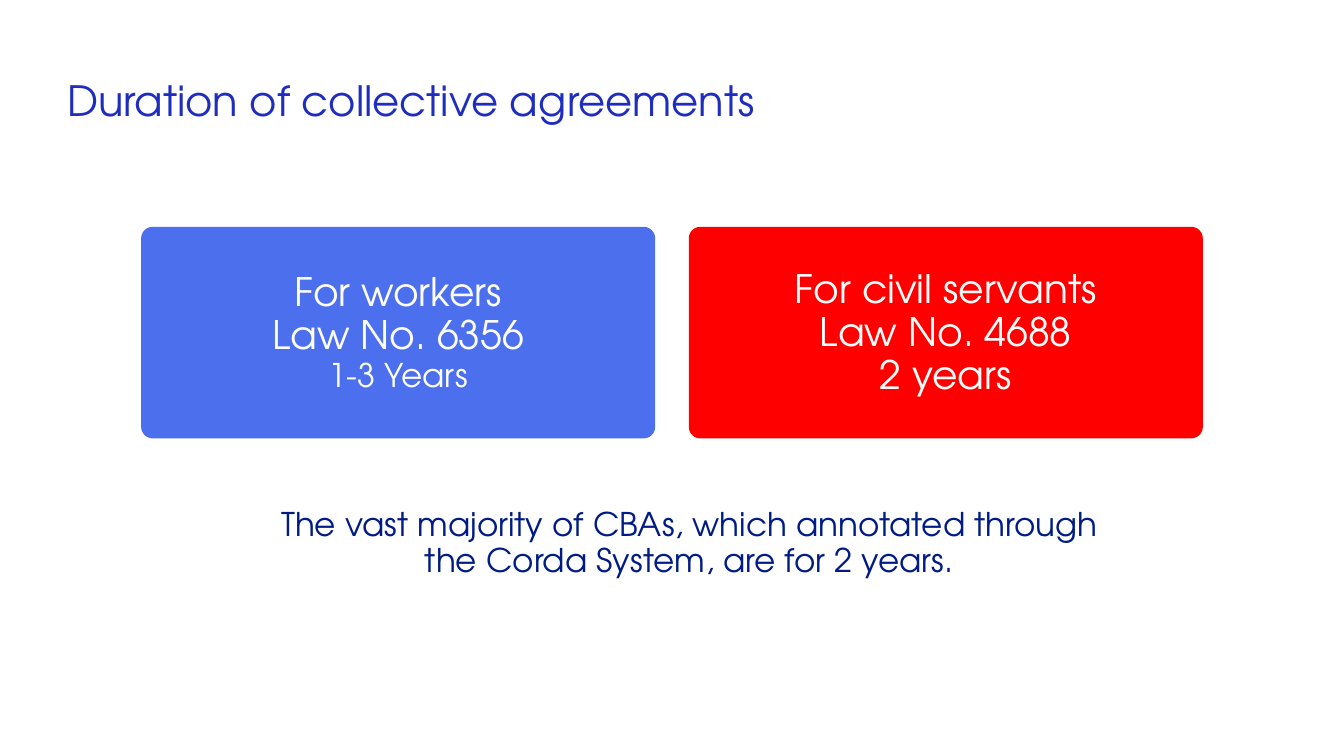
"""Build the slide on the duration of collective agreements."""
from dataclasses import dataclass

from pptx import Presentation, util as u
from pptx.dml.color import RGBColor
from pptx.enum import shapes, text
from pptx.text.text import TextFrame

WIDTH, HEIGHT = u.Inches(13.33), u.Inches(7.5)
COLUMN, ROW = WIDTH / 40, HEIGHT / 30
FONT = "TeX Gyre Adventor"
BLUE = RGBColor(0x4B, 0x6F, 0xED)
RED = RGBColor(0xFF, 0x00, 0x00)
WHITE = RGBColor(0xFD, 0xFD, 0xFC)
NAVY = RGBColor(0x00, 0x1C, 0x84)
TITLE_BLUE = RGBColor(0x1E, 0x2D, 0xBE)


@dataclass(frozen=True)
class Area:
    column: float
    row: float
    columns: float
    rows: float

    def box(self) -> tuple[int, int, int, int]:
        return (round(self.column * COLUMN), round(self.row * ROW),
                round(self.columns * COLUMN), round(self.rows * ROW))


@dataclass(frozen=True)
class Line:
    wording: str
    size: float
    spacing: float
    color: RGBColor = WHITE


@dataclass(frozen=True)
class Group:
    fill: RGBColor
    lines: tuple[Line, ...]


@dataclass(frozen=True)
class Statement:
    area: Area
    line: Line
    alignment: text.PP_ALIGN


LARGE, SMALL = (28, 30.8), (23.3, 25.7)
GROUPS = (
    Group(BLUE, (Line("For workers", *LARGE), Line("Law No. 6356", *LARGE),
                 Line("1-3 Years", *SMALL))),
    Group(RED, (Line("For civil servants", *LARGE), Line("Law No. 4688", *LARGE),
                Line("2 years", *LARGE))),
)
FIRST_COLUMN, PITCH = 4.2, 16.3
STATEMENTS = (
    Statement(Area(2, 2.96, 35.77, 1.96),
              Line("Duration of collective agreements", 29.8, 35.8, TITLE_BLUE),
              text.PP_ALIGN.LEFT),
    Statement(Area(7.8, 20.12, 25.42, 2.92),
              Line("The vast majority of CBAs, which annotated through "
                   "the Corda System, are for 2 years.", *SMALL, NAVY),
              text.PP_ALIGN.CENTER),
)


def write(frame: TextFrame, lines: tuple[Line, ...], alignment: text.PP_ALIGN) -> None:
    frame.word_wrap = True
    frame.margin_left = frame.margin_right = frame.margin_top = frame.margin_bottom = 0
    for index, line in enumerate(lines):
        paragraph = frame.add_paragraph() if index else frame.paragraphs[0]
        paragraph.text = line.wording
        paragraph.alignment = alignment
        paragraph.line_spacing = u.Pt(line.spacing)
        paragraph.font.name = FONT
        paragraph.font.size = u.Pt(line.size)
        paragraph.font.color.rgb = line.color


def draw_group(slide, group: Group, area: Area) -> None:
    card = slide.shapes.add_shape(shapes.MSO_SHAPE.ROUNDED_RECTANGLE, *area.box())
    card.adjustments[0] = 0.055
    card.shadow.inherit = False
    card.fill.solid()
    card.fill.fore_color.rgb = group.fill
    card.line.fill.background()
    card.text_frame.vertical_anchor = text.MSO_ANCHOR.MIDDLE
    write(card.text_frame, group.lines, text.PP_ALIGN.CENTER)


def draw_statement(slide, statement: Statement) -> None:
    frame = slide.shapes.add_textbox(*statement.area.box()).text_frame
    write(frame, (statement.line,), statement.alignment)


def main() -> None:
    deck = Presentation()
    deck.slide_width, deck.slide_height = WIDTH, HEIGHT
    slide = deck.slides.add_slide(deck.slide_layouts[6])
    for index, group in enumerate(GROUPS):
        draw_group(slide, group, Area(FIRST_COLUMN + index * PITCH, 9, 15.3, 8.4))
    for statement in STATEMENTS:
        draw_statement(slide, statement)
    deck.save("out.pptx")


if __name__ == "__main__":
    main()
